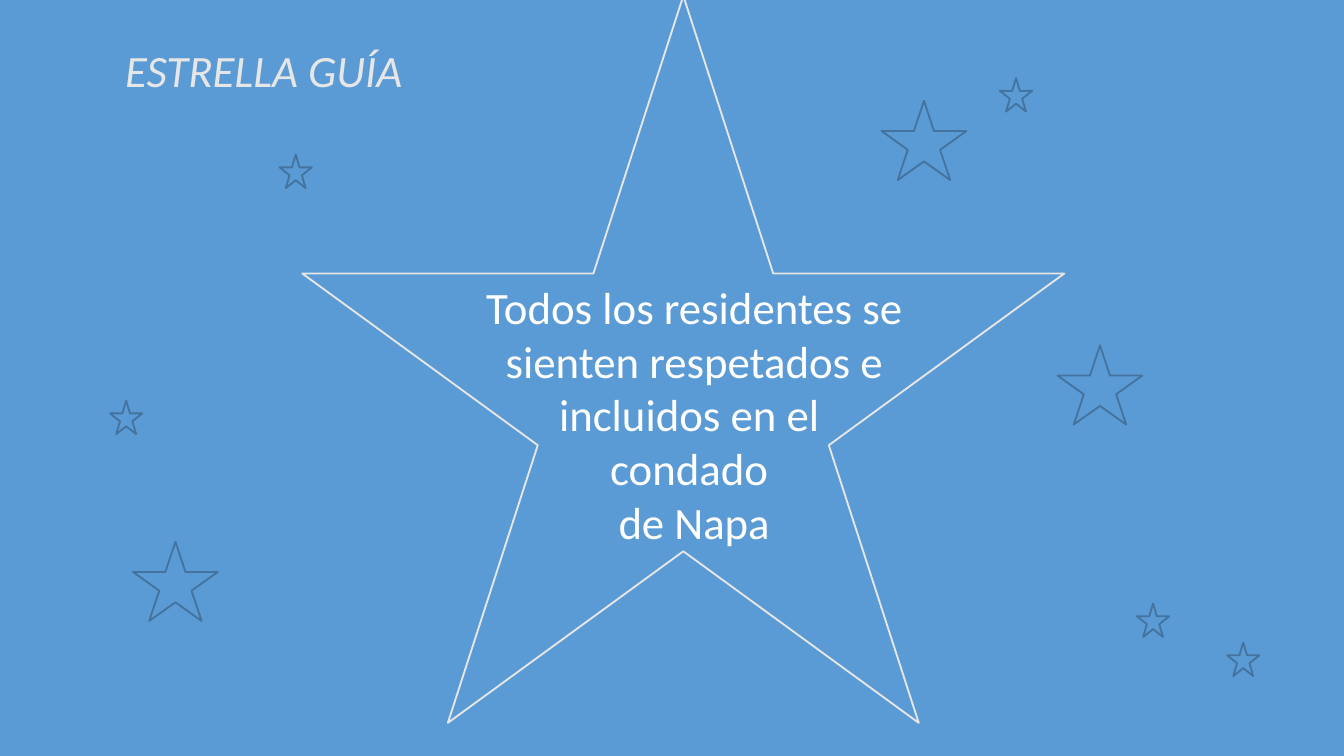
from dataclasses import dataclass

from pptx import Presentation
from pptx.dml.color import RGBColor
from pptx.enum.shapes import MSO_SHAPE as Preset
from pptx.enum.text import MSO_ANCHOR as Anchor, MSO_AUTO_SIZE as AutoSize, PP_ALIGN as Align
from pptx.util import Pt


@dataclass(frozen=True)
class Theme:
    sky: RGBColor = RGBColor(0x5B, 0x9B, 0xD5)
    pale: RGBColor = RGBColor(0xE7, 0xE6, 0xE6)
    white: RGBColor = RGBColor(0xFF, 0xFF, 0xFF)
    outline: RGBColor = RGBColor(0x43, 0x73, 0x9E)
    font: str = "Calibri"
    text_size: int = 24
    line_width: int = 1


THEME = Theme()
TITLE_ONLY = 5

TITLE = "ESTRELLA GUÍA"
VISION = [
    "Todos los residentes se sienten respetados e",
    "incluidos en el ",
    "condado ",
    "de Napa",
]

# Star sizes (width, height) and top-left corners, in points
GUIDE_STAR = (162, -2.2, 408.2, 389.5)
LARGE_SIZE = (45.4, 42.5)
SMALL_SIZE = (17.3, 18)
LARGE_STARS = [(71.3, 290.2), (566.6, 185), (472.3, 54)]
SMALL_STARS = [(535.7, 41.8), (657.4, 344.2), (609.1, 323.3), (59, 214.6), (149.8, 82.8)]


def apply(target, values):
    for name, value in values.items():
        setattr(target, name, value)


def place(shape, left, top, width, height):
    apply(shape, {"left": Pt(left), "top": Pt(top), "width": Pt(width), "height": Pt(height)})


def write(frame, lines, color, align, frame_format, italic=False, spacing=1.0):
    apply(frame, {"word_wrap": True, **frame_format})
    for index, line in enumerate(lines):
        paragraph = frame.add_paragraph() if index else frame.paragraphs[0]
        apply(paragraph, {"alignment": align, "line_spacing": spacing,
                          "space_before": Pt(0)})
        run = paragraph.add_run()
        run.text = line
        apply(run.font, {"name": THEME.font, "size": Pt(THEME.text_size), "italic": italic})
        run.font.color.rgb = color


def add_title(slide):
    title = slide.shapes.title
    place(title, 59.8, 15.1, 415.4, 41.8)
    write(title.text_frame, [TITLE], THEME.pale, Align.LEFT,
          {"vertical_anchor": Anchor.TOP, "auto_size": AutoSize.NONE},
          italic=True, spacing=1.14)


def add_star(slide, left, top, width, height, color):
    star = slide.shapes.add_shape(Preset.STAR_5_POINT, Pt(left), Pt(top), Pt(width), Pt(height))
    star.shadow.inherit = False
    star.fill.solid()
    star.fill.fore_color.rgb = THEME.sky
    star.line.color.rgb = color
    star.line.width = Pt(THEME.line_width)


def add_vision(slide):
    box = slide.shapes.add_textbox(Pt(247), Pt(146.2), Pt(249.8), Pt(152.6))
    write(box.text_frame, VISION, THEME.white, Align.CENTER,
          {"auto_size": AutoSize.SHAPE_TO_FIT_TEXT})


def main():
    presentation = Presentation()
    apply(presentation, {"slide_width": Pt(720), "slide_height": Pt(405)})
    slide = presentation.slides.add_slide(presentation.slide_layouts[TITLE_ONLY])

    # Sky
    slide.background.fill.solid()
    slide.background.fill.fore_color.rgb = THEME.sky

    # Title, guiding star and its message
    add_title(slide)
    add_star(slide, *GUIDE_STAR, THEME.pale)
    add_vision(slide)

    # Scattered stars
    for size, corners in ((LARGE_SIZE, LARGE_STARS), (SMALL_SIZE, SMALL_STARS)):
        for corner in corners:
            add_star(slide, *corner, *size, THEME.outline)

    presentation.save("out.pptx")


if __name__ == "__main__":
    main()
